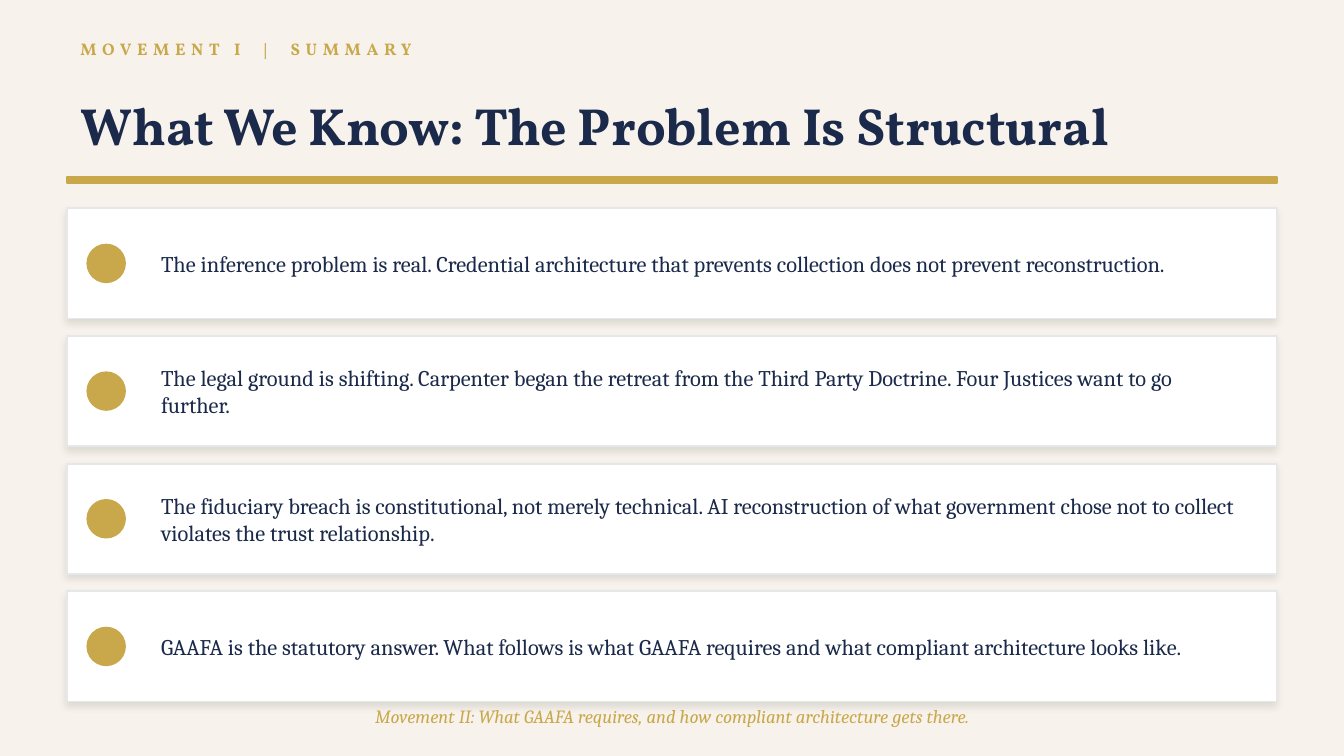
from lxml import etree
from pptx import Presentation
from pptx.dml.color import RGBColor
from pptx.enum.shapes import MSO_SHAPE
from pptx.enum.text import MSO_ANCHOR, PP_ALIGN
from pptx.oxml.ns import qn
from pptx.util import Pt

RECT, OVAL = MSO_SHAPE.RECTANGLE, MSO_SHAPE.OVAL
LEFT, CENTER = PP_ALIGN.LEFT, PP_ALIGN.CENTER
MIDDLE = MSO_ANCHOR.MIDDLE

PX = 4572  # EMU per px, 200 px to the inch
EMU_PER_PT = 12700

CREAM, WHITE, GOLD, NAVY, BORDER = "F7F3EC", "FFFFFF", "C9A84C", "1B2A4A", "E5E7EB"
HEADING_FONT, BODY_FONT = "Vollkorn", "Cambria"

MARGIN, CONTENT_W = 100, 1800
CARD_TOP, CARD_H, CARD_STEP = 310, 164, 190
DOT_SIZE, STATEMENT_H = 56, 116

STATEMENTS = [
    "The inference problem is real. Credential architecture that prevents "
    "collection does not prevent reconstruction.",
    "The legal ground is shifting. Carpenter began the retreat from the "
    "Third Party Doctrine. Four Justices want to go further.",
    "The fiduciary breach is constitutional, not merely technical. AI reconstruction "
    "of what government chose not to collect violates the trust relationship.",
    "GAAFA is the statutory answer. What follows is what GAAFA requires "
    "and what compliant architecture looks like.",
]


def color(hex_code):
    return RGBColor.from_string(hex_code)


def box(*lengths):
    return [length * PX for length in lengths]


def add_text(slide, frame, text, size, font, ink, bold=False, italic=False,
             align=LEFT, spacing=0):
    text_frame = slide.shapes.add_textbox(*box(*frame)).text_frame
    text_frame.word_wrap = True
    text_frame.vertical_anchor = MIDDLE
    paragraph = text_frame.paragraphs[0]
    paragraph.alignment = align
    run = paragraph.add_run()
    run.text = text
    run.font.size = Pt(size)
    run.font.name = font
    run.font.bold = bold
    run.font.italic = italic
    run.font.color.rgb = color(ink)
    if spacing:
        run._r.get_or_add_rPr().set("spc", str(spacing * 100))


def add_block(slide, kind, frame, fill, line):
    block = slide.shapes.add_shape(kind, *box(*frame))
    block.shadow.inherit = False
    block.fill.solid()
    block.fill.fore_color.rgb = color(fill)
    block.line.color.rgb = color(line)
    block.line.width = Pt(1)
    return block


def add_soft_shadow(block):
    effects = block._element.spPr.find(qn("a:effectLst"))
    shadow = etree.SubElement(effects, qn("a:outerShdw"), {
        "blurRad": str(4 * EMU_PER_PT), "dist": str(2 * EMU_PER_PT),
        "dir": str(135 * 60000), "algn": "bl", "rotWithShape": "0"})
    tint = etree.SubElement(shadow, qn("a:srgbClr"), val="000000")
    etree.SubElement(tint, qn("a:alpha"), val="10000")


def add_card(slide, top, statement):
    card = add_block(slide, RECT, (MARGIN, top, CONTENT_W, CARD_H), WHITE, BORDER)
    add_soft_shadow(card)
    dot_top = top + (CARD_H - DOT_SIZE) // 2
    add_block(slide, OVAL, (130, dot_top, DOT_SIZE, DOT_SIZE), GOLD, GOLD)
    statement_top = top + (CARD_H - STATEMENT_H) // 2
    add_text(slide, (220, statement_top, 1640, STATEMENT_H), statement,
             12, BODY_FONT, NAVY)


def main():
    deck = Presentation()
    deck.slide_width, deck.slide_height = box(2000, 1125)
    slide = deck.slides.add_slide(deck.slide_layouts[6])
    slide.background.fill.solid()
    slide.background.fill.fore_color.rgb = color(CREAM)

    # Heading and rule
    add_text(slide, (MARGIN, 44, CONTENT_W, 56), "MOVEMENT I  |  SUMMARY",
             9, HEADING_FONT, GOLD, bold=True, spacing=3)
    add_text(slide, (MARGIN, 110, CONTENT_W, 150),
             "What We Know: The Problem Is Structural",
             28, HEADING_FONT, NAVY, bold=True)
    add_block(slide, RECT, (MARGIN, 264, CONTENT_W, 8), GOLD, GOLD)

    # Summary cards
    for index, statement in enumerate(STATEMENTS):
        add_card(slide, CARD_TOP + index * CARD_STEP, statement)

    # Lead-in to the next movement
    add_text(slide, (MARGIN, 1040, CONTENT_W, 50),
             "Movement II: What GAAFA requires, and how compliant architecture gets there.",
             10, BODY_FONT, GOLD, italic=True, align=CENTER)

    deck.save("out.pptx")


if __name__ == "__main__":
    main()
